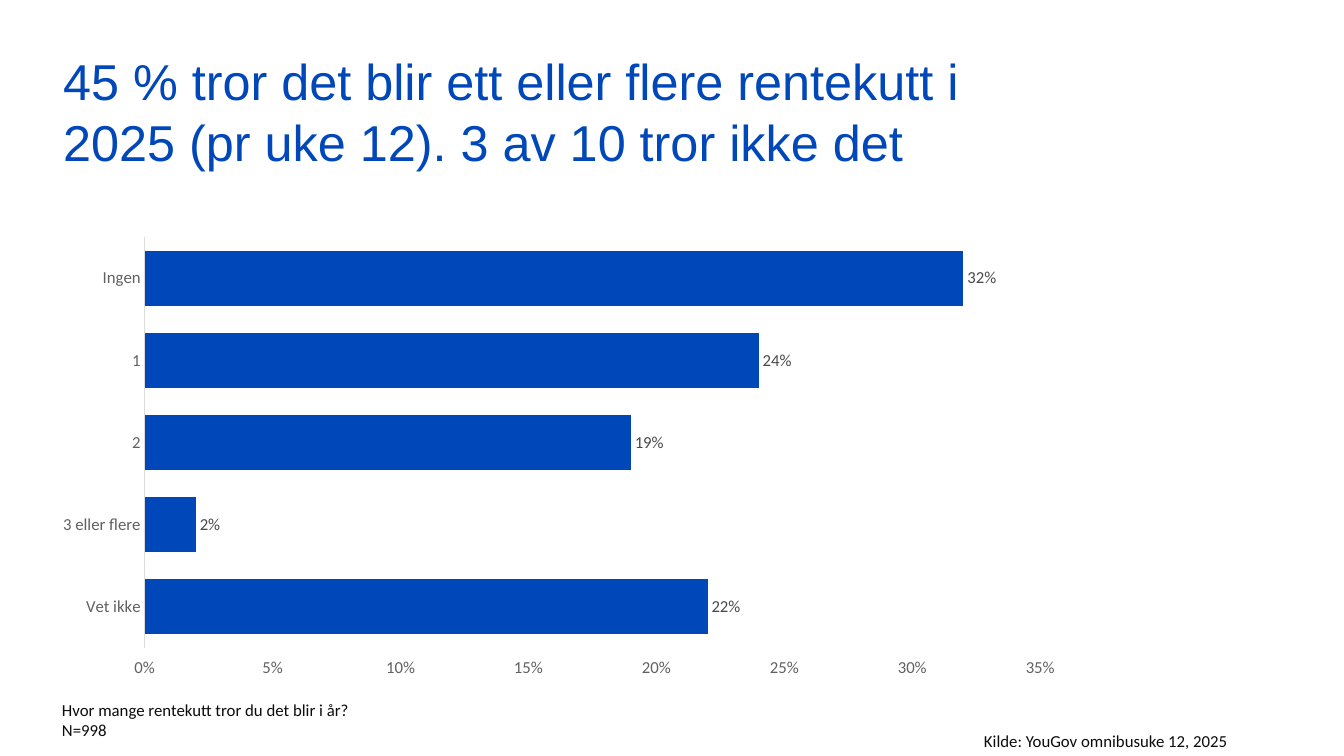
from dataclasses import dataclass

from pptx import Presentation
from pptx import util as u
from pptx.chart.data import CategoryChartData
from pptx.dml.color import RGBColor
from pptx.enum import chart as ch
from pptx.enum import text as t
from pptx.slide import Slide

EMU_PER_PX = 914400 / 100.8

BLUE = RGBColor(0x00, 0x47, 0xBA)
INK = RGBColor(0x0C, 0x0C, 0x0C)
AXIS_GREY = RGBColor(0x61, 0x61, 0x61)
LABEL_GREY = RGBColor(0x49, 0x49, 0x49)
LINE_GREY = RGBColor(0xDB, 0xDB, 0xDB)

ANSWERS = {"Ingen": 0.32, "1": 0.24, "2": 0.19, "3 eller flere": 0.02, "Vet ikke": 0.22}


def px(length: int) -> u.Emu:
    return u.Emu(round(length * EMU_PER_PX))


@dataclass(frozen=True)
class TextBlock:
    left: int
    top: int
    width: int
    height: int
    lines: tuple[str, ...]
    size: int = 12
    font: str = "Calibri"
    color: RGBColor = INK
    inset: tuple[int, int] = (10, 5)
    anchor: t.MSO_ANCHOR = t.MSO_ANCHOR.TOP


TEXT_BLOCKS = (
    # Title
    TextBlock(63, 50, 1012, 122,
              ("45 % tror det blir ett eller flere rentekutt i 2025 (pr uke 12). "
               "3 av 10 tror ikke det",),
              size=36, font="Arial", color=BLUE, inset=(0, 0),
              anchor=t.MSO_ANCHOR.MIDDLE),
    # Source
    TextBlock(974, 726, 298, 30, ("Kilde: YouGov omnibusuke 12, 2025",)),
    # Question and sample size
    TextBlock(52, 695, 684, 50, ("Hvor mange rentekutt tror du det blir i år?", "N=998")),
)


def add_text(slide: Slide, block: TextBlock) -> None:
    box = slide.shapes.add_textbox(px(block.left), px(block.top),
                                   px(block.width), px(block.height))
    frame = box.text_frame
    frame.word_wrap = True
    frame.vertical_anchor = block.anchor
    frame.margin_left = frame.margin_right = px(block.inset[0])
    frame.margin_top = frame.margin_bottom = px(block.inset[1])
    for index, line in enumerate(block.lines):
        paragraph = frame.add_paragraph() if index else frame.paragraphs[0]
        run = paragraph.add_run()
        run.text = line
        style_font(run.font, block.size, block.color, block.font)


def style_font(font, size: int, color: RGBColor, name: str = "Calibri") -> None:
    font.size = u.Pt(size)
    font.name = name
    font.color.rgb = color


def add_answer_chart(slide: Slide) -> None:
    data = CategoryChartData(number_format="0%")
    data.categories = list(ANSWERS)
    data.add_series("Series 1", list(ANSWERS.values()))
    chart = slide.shapes.add_chart(ch.XL_CHART_TYPE.BAR_CLUSTERED, px(63), px(228),
                                   px(1012), px(459), data).chart
    chart.has_title = False
    chart.has_legend = False
    style_font(chart.font, 10, INK)

    # Axes, with the percentages below the reversed answers
    for axis in (chart.category_axis, chart.value_axis):
        axis.major_tick_mark = axis.minor_tick_mark = ch.XL_TICK_MARK.NONE
        axis.has_major_gridlines = False
        style_font(axis.tick_labels.font, 12, AXIS_GREY)
    answers, shares = chart.category_axis, chart.value_axis
    answers.reverse_order = True
    answers.format.line.color.rgb = LINE_GREY
    answers.format.line.width = u.Pt(0.75)
    shares.tick_label_position = ch.XL_TICK_LABEL_POSITION.HIGH
    shares.minimum_scale, shares.maximum_scale, shares.major_unit = 0, 0.35, 0.05
    shares.tick_labels.number_format = "0%"
    shares.tick_labels.number_format_is_linked = False
    shares.format.line.fill.background()

    # Bars and value labels
    plot = chart.plots[0]
    plot.gap_width = 50
    plot.vary_by_categories = False
    bars = plot.series[0]
    bars.format.fill.solid()
    bars.format.fill.fore_color.rgb = BLUE
    labels = bars.data_labels
    labels.show_value = True
    labels.position = ch.XL_LABEL_POSITION.OUTSIDE_END
    labels.number_format = "0%"
    labels.number_format_is_linked = False
    style_font(labels.font, 12, LABEL_GREY)


def main() -> None:
    presentation = Presentation()
    presentation.slide_width, presentation.slide_height = px(1344), px(756)
    slide = presentation.slides.add_slide(presentation.slide_layouts[6])
    for block in TEXT_BLOCKS:
        add_text(slide, block)
    add_answer_chart(slide)
    presentation.save("out.pptx")


if __name__ == "__main__":
    main()
